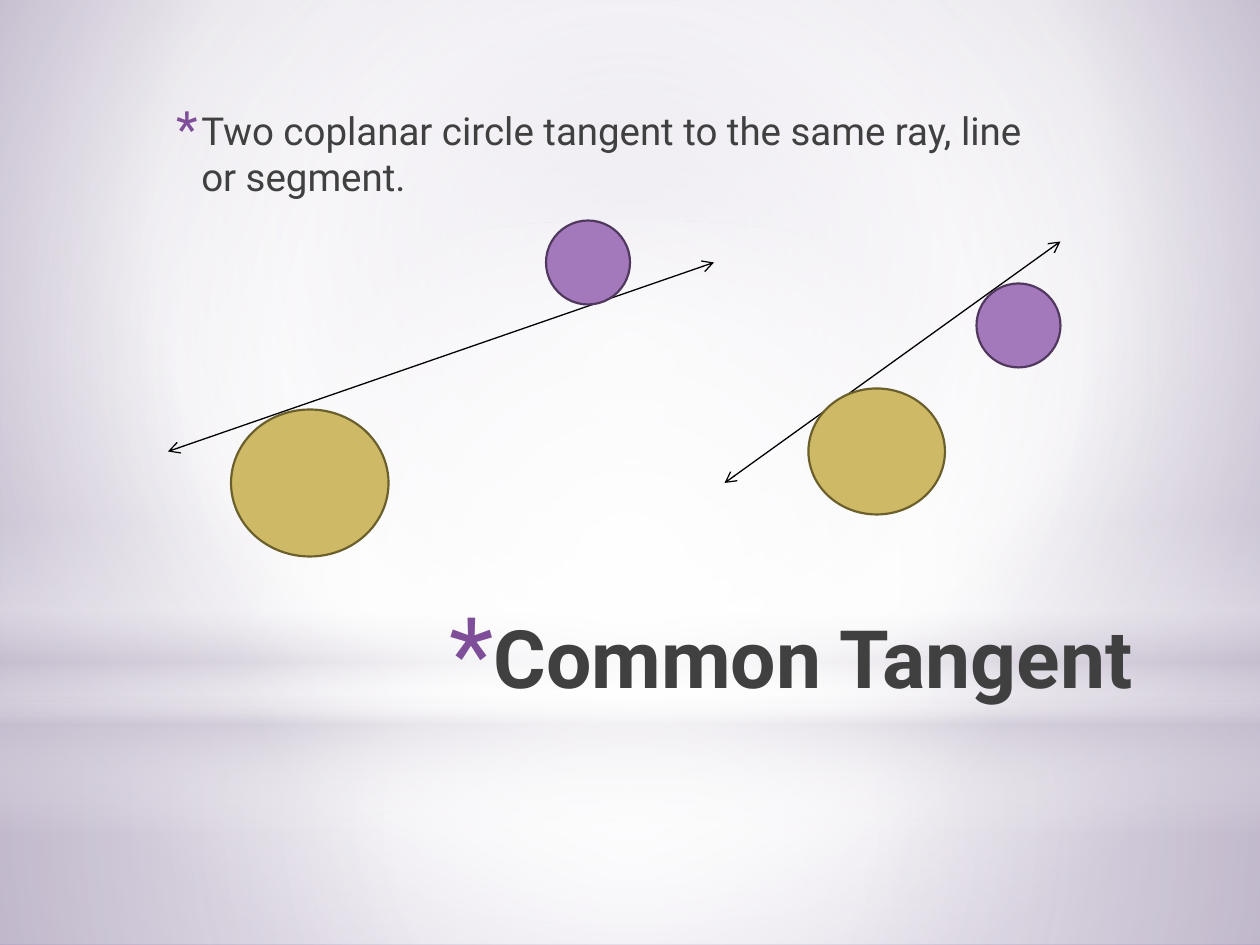
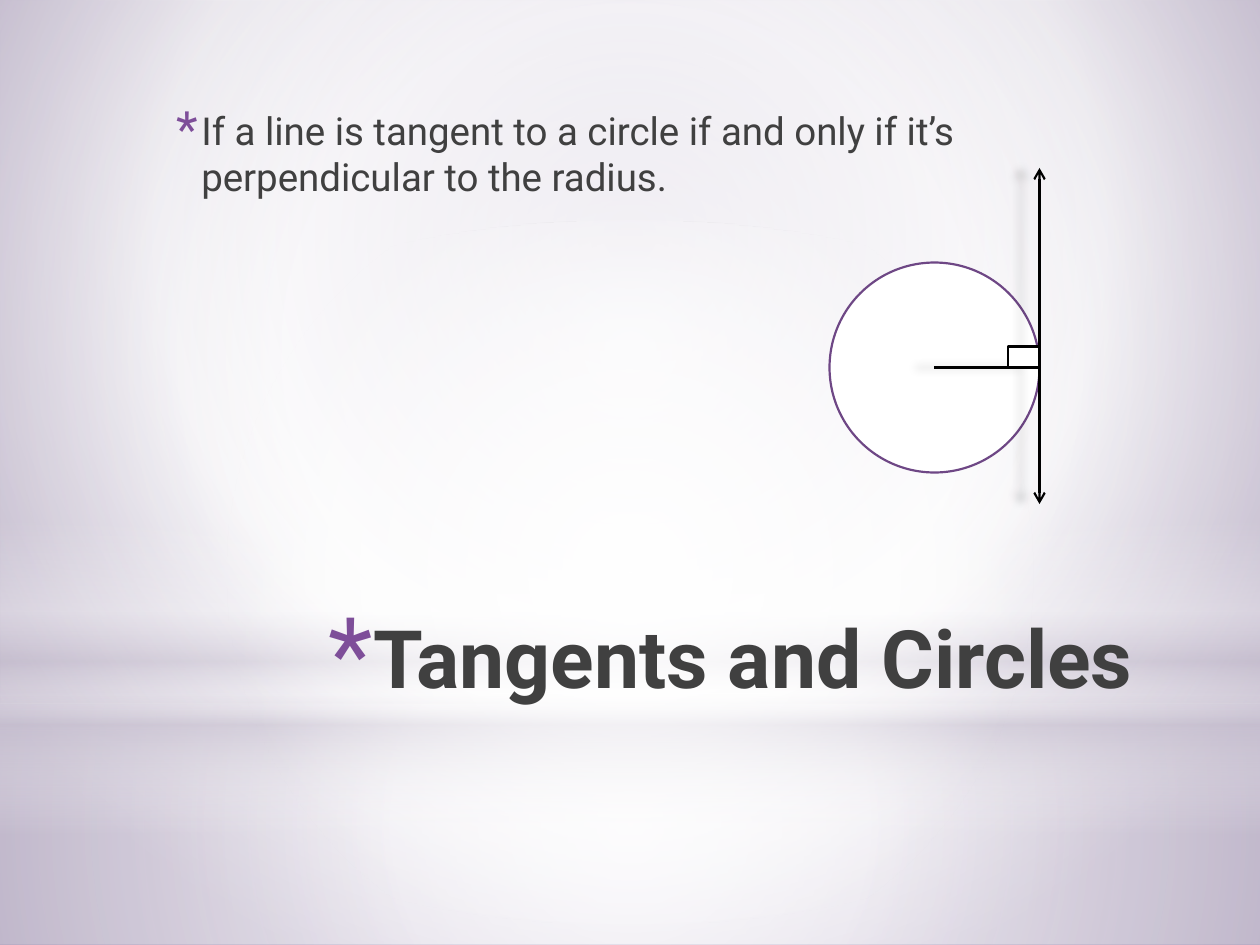
from lxml.etree import SubElement
from pptx import Presentation
from pptx.dml.color import RGBColor
from pptx.enum.shapes import MSO_CONNECTOR, MSO_SHAPE
from pptx.enum.text import MSO_ANCHOR, PP_ALIGN
from pptx.oxml import parse_xml
from pptx.oxml.ns import nsdecls, qn
from pptx.util import Pt

FONT = "Roboto"
COLORS = {
    "text": "404040", "bullet": "7E4E99", "black": "000000", "white": "FFFFFF",
    "gold": "CEB966", "gold edge": "6B5F2B",
    "purple": "A379BB", "purple edge": "51385F", "violet edge": "6E4785",
    "mist": "C9C2D1", "lilac": "C1B7CD", "dusk": "A191B5",
}
WIDTH, HEIGHT = 720, 540
HORIZON = 402
CENTER = (50, 50, 50, 50)

# Gradient stops: position %, colour, opacity %
BACKGROUND = [(0, "lilac", 100), (60, "white", 100), (100, "dusk", 100)]
BACKGROUND_FOCUS = (20, 10, 20, 60)
# Shape, box, stops, focus (None: top to bottom)
BACKDROP = [
    (MSO_SHAPE.RECTANGLE, (0, HORIZON, WIDTH, HEIGHT - HORIZON),
     [(0, "white", 91), (37, "white", 76), (100, "mist", 79)], CENTER),
    (MSO_SHAPE.RECTANGLE, (0, 0, WIDTH, HORIZON),
     [(0, "white", 89), (48, "white", 62), (100, "mist", 79)], CENTER),
    (MSO_SHAPE.RECTANGLE, (0, 297, WIDTH, 180),
     [(0, "white", 0), (29, "white", 30), (45, "mist", 40),
      (55, "white", 26), (65, "mist", 60), (100, "white", 0)], None),
    (MSO_SHAPE.OVAL, (0, 126, WIDTH, HORIZON),
     [(0, "white", 100), (56, "white", 0)], CENTER),
]

TITLE = {"box": (141, 344, 513, 90), "size": 46, "bold": True,
         "align": PP_ALIGN.RIGHT, "margin": 25.2, "hang": 25.2,
         "bullet": 128, "before": 0, "after": 0}
BODY = {"box": (90, 57.6, 504, 273.6), "size": 22, "bold": False,
        "align": PP_ALIGN.LEFT, "margin": 18, "hang": 14.4,
        "bullet": 130, "before": 20, "after": 3}

COMMON_TANGENTS = [  # line ends, large circle, small circle
    ((96, 258, 408, 150), (132, 234, 90, 84), (312, 126, 48, 48)),
    ((414, 276, 606, 138), (462, 222, 78, 72), (558, 162, 48, 48)),
]
CIRCLE_CENTER, RADIUS = (534, 210), 60
TANGENT_REACH = (96, 288)
RIGHT_ANGLE = (18, 12)


def gradient(stops, focus):
    stop_xml = "".join(
        f'<a:gs pos="{pos * 1000}"><a:srgbClr val="{COLORS[color]}">'
        f'<a:alpha val="{opacity * 1000}"/></a:srgbClr></a:gs>'
        for pos, color, opacity in stops)
    if focus:
        sides = " ".join(f'{side}="{value * 1000}"' for side, value in zip("ltrb", focus))
        direction = f'<a:path path="circle"><a:fillToRect {sides}/></a:path>'
    else:
        direction = '<a:lin ang="5400000" scaled="0"/>'
    return parse_xml(f'<a:gradFill {nsdecls("a")} rotWithShape="1">'
                     f"<a:gsLst>{stop_xml}</a:gsLst>{direction}</a:gradFill>")


def fill_gradient(fill, element, stops, focus):
    """Fill with a solid first, then put the gradient in its place."""
    fill.solid()
    solid = element.find(".//" + qn("a:solidFill"))
    solid.getparent().replace(solid, gradient(stops, focus))


def rgb(color):
    return RGBColor.from_string(COLORS[color])


def points(values):
    return [Pt(value) for value in values]


def add_backdrop(layout, slide):
    """Shapes can only be drawn on a slide, so each is then moved to the layout."""
    fill_gradient(layout.background.fill, layout.element, BACKGROUND, BACKGROUND_FOCUS)
    for kind, box, stops, focus in BACKDROP:
        part = slide.shapes.add_shape(kind, *points(box))
        part.shadow.inherit = False
        part.line.fill.background()
        fill_gradient(part.fill, part.element.spPr, stops, focus)
        layout.shapes.element.append(part.element)


def add_text(slide, text, style):
    frame = slide.shapes.add_textbox(*points(style["box"])).text_frame
    frame.word_wrap = True
    frame.vertical_anchor = MSO_ANCHOR.TOP
    paragraph = frame.paragraphs[0]
    paragraph.text = text
    paragraph.alignment = style["align"]
    font = paragraph.font
    font.name, font.size, font.bold = FONT, Pt(style["size"]), style["bold"]
    font.color.rgb = rgb("text")

    properties = paragraph._p.get_or_add_pPr()
    properties.set("marL", str(Pt(style["margin"])))
    properties.set("indent", str(-Pt(style["hang"])))
    marks = (
        f'<a:spcBef><a:spcPct val="{style["before"] * 1000}"/></a:spcBef>',
        f'<a:spcAft><a:spcPts val="{style["after"] * 100}"/></a:spcAft>',
        f'<a:buClr><a:srgbClr val="{COLORS["bullet"]}"/></a:buClr>',
        f'<a:buSzPct val="{style["bullet"] * 1000}"/>',
        f'<a:buFont typeface="{FONT}"/>',
        '<a:buChar char="*"/>',
    )
    for position, mark in enumerate(marks):
        name, rest = mark[:-1].split(" ", 1) if mark.endswith("/>") else mark.split(">", 1)
        closing = f" {nsdecls('a')} {rest}>" if mark.endswith("/>") else f" {nsdecls('a')}>{rest}"
        properties.insert(position, parse_xml(name + closing))


def add_figure(slide, kind, box, fill, edge):
    figure = slide.shapes.add_shape(kind, *points(box))
    figure.shadow.inherit = False
    figure.fill.solid()
    figure.fill.fore_color.rgb = rgb(fill)
    figure.line.color.rgb = rgb(edge)
    figure.line.width = Pt(1.25)


def add_line(slide, ends, width, arrows=True, shadow=False):
    connector = slide.shapes.add_connector(MSO_CONNECTOR.STRAIGHT, *points(ends))
    connector.line.color.rgb = rgb("black")
    connector.line.width = Pt(width)
    if arrows:
        outline = connector.line._get_or_add_ln()
        for end in ("a:headEnd", "a:tailEnd"):
            SubElement(outline, qn(end), type="arrow")
    effects = SubElement(connector.element.spPr, qn("a:effectLst"))
    if shadow:
        effects.append(parse_xml(
            f'<a:outerShdw {nsdecls("a")} blurRad="{Pt(5)}" dist="{Pt(11)}" dir="10800000">'
            f'<a:srgbClr val="{COLORS["black"]}"><a:alpha val="20000"/></a:srgbClr>'
            "</a:outerShdw>"))


def draw_common_tangents(slide):
    for ends, large, small in COMMON_TANGENTS:
        add_line(slide, ends, 0.75)
        add_figure(slide, MSO_SHAPE.OVAL, large, "gold", "gold edge")
        add_figure(slide, MSO_SHAPE.OVAL, small, "purple", "purple edge")


def draw_perpendicular_radius(slide):
    x, y = CIRCLE_CENTER
    touch = x + RADIUS
    top, bottom = TANGENT_REACH
    width, height = RIGHT_ANGLE
    add_figure(slide, MSO_SHAPE.OVAL, (x - RADIUS, y - RADIUS, 2 * RADIUS, 2 * RADIUS),
               "white", "violet edge")
    add_line(slide, (touch, top, touch, bottom), 1.25, shadow=True)
    add_line(slide, (x, y, touch, y), 1.25, arrows=False, shadow=True)
    add_figure(slide, MSO_SHAPE.RECTANGLE, (touch - width, y - height, width, height),
               "white", "black")


SLIDES = [
    ("Common Tangent",
     "Two coplanar circle tangent to the same ray, line or segment.",
     draw_common_tangents),
    ("Tangents and Circles",
     "If a line is tangent to a circle if and only if it’s perpendicular to the radius.",
     draw_perpendicular_radius),
]


def main():
    deck = Presentation()
    deck.slide_width, deck.slide_height = Pt(WIDTH), Pt(HEIGHT)
    blank = deck.slide_layouts[6]
    for number, (title, statement, draw) in enumerate(SLIDES):
        slide = deck.slides.add_slide(blank)
        if number == 0:
            add_backdrop(blank, slide)
        add_text(slide, title, TITLE)
        add_text(slide, statement, BODY)
        draw(slide)
    deck.save("out.pptx")


if __name__ == "__main__":
    main()
